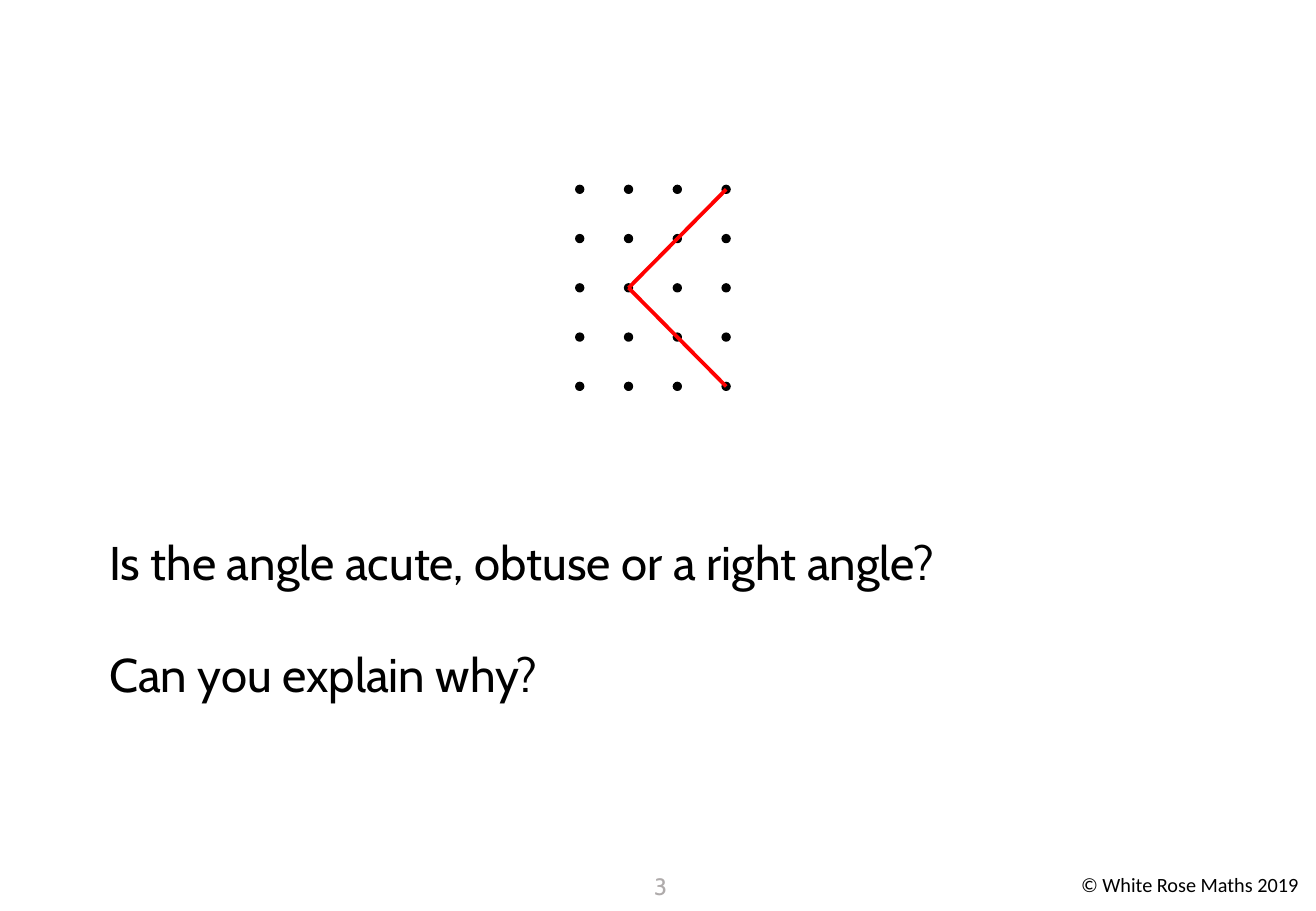
from itertools import product

from lxml import etree
from pptx import Presentation
from pptx.dml.color import RGBColor
from pptx.enum.shapes import MSO_CONNECTOR as Connector, MSO_SHAPE as Shape
from pptx.enum.text import PP_ALIGN as Align
from pptx.oxml.ns import qn
from pptx.util import Cm, Pt

BLACK, GREY, RED = "000000", "AFABAB", "FF0000"
COLUMNS, ROWS = 4, 5


def color(value):
    return RGBColor.from_string(value)


def grid_point(column, row):
    """Centre of a dot on the grid, in centimetres."""
    return 12.12 + 1.02 * column, 3.96 + 1.03 * row


class Page:
    def __init__(self, deck, font="Cabin"):
        self.shapes = deck.slides.add_slide(deck.slide_layouts[6]).shapes
        self.font = font

    def text(self, place, lines, size, ink=BLACK, font=None, align=Align.LEFT, gap=0, wrap=True):
        frame = self.shapes.add_textbox(*map(Cm, place)).text_frame
        frame.word_wrap = wrap
        for index, line in enumerate(lines):
            para = frame.add_paragraph() if index else frame.paragraphs[0]
            para.text = line
            para.alignment = align
            para.space_before = Pt(gap if index else 0)
            para.font.name = font or self.font
            para.font.size = Pt(size)
            para.font.color.rgb = color(ink)

    def dot(self, center, size=0.16):
        left, top = (Cm(value - size / 2) for value in center)
        dot = self.shapes.add_shape(Shape.OVAL, left, top, Cm(size), Cm(size))
        dot.shadow.inherit = False
        dot.fill.solid()
        dot.fill.fore_color.rgb = color(BLACK)
        dot.line.color.rgb = color(BLACK)
        dot.line.width = Pt(1)

    def line(self, start, end):
        line = self.shapes.add_connector(Connector.STRAIGHT, *map(Cm, start + end))
        line.line.color.rgb = color(RED)
        line.line.width = Pt(2.25)
        etree.SubElement(line._element.spPr, qn("a:effectLst"))


def main():
    deck = Presentation()
    deck.slide_width, deck.slide_height = Cm(27.51), Cm(19.05)
    page = Page(deck)

    page.text((22.35, 18.11, 5.1, 0.76), ["© White Rose Maths 2019"], 12,
              font="Calibri", wrap=False)
    page.text((13.16, 18.11, 1.3, 0.9), ["3"], 14, GREY, align=Align.CENTER)
    page.text((2.03, 11.02, 22.38, 3.83),
              ["Is the angle acute, obtuse or a right angle?", "Can you explain why?"],
              28, gap=33)

    for row, column in product(range(ROWS), range(COLUMNS)):
        page.dot(grid_point(column, row))
    vertex = grid_point(1, 2)
    for row in (0, ROWS - 1):
        page.line(vertex, grid_point(COLUMNS - 1, row))

    deck.save("out.pptx")


if __name__ == "__main__":
    main()
